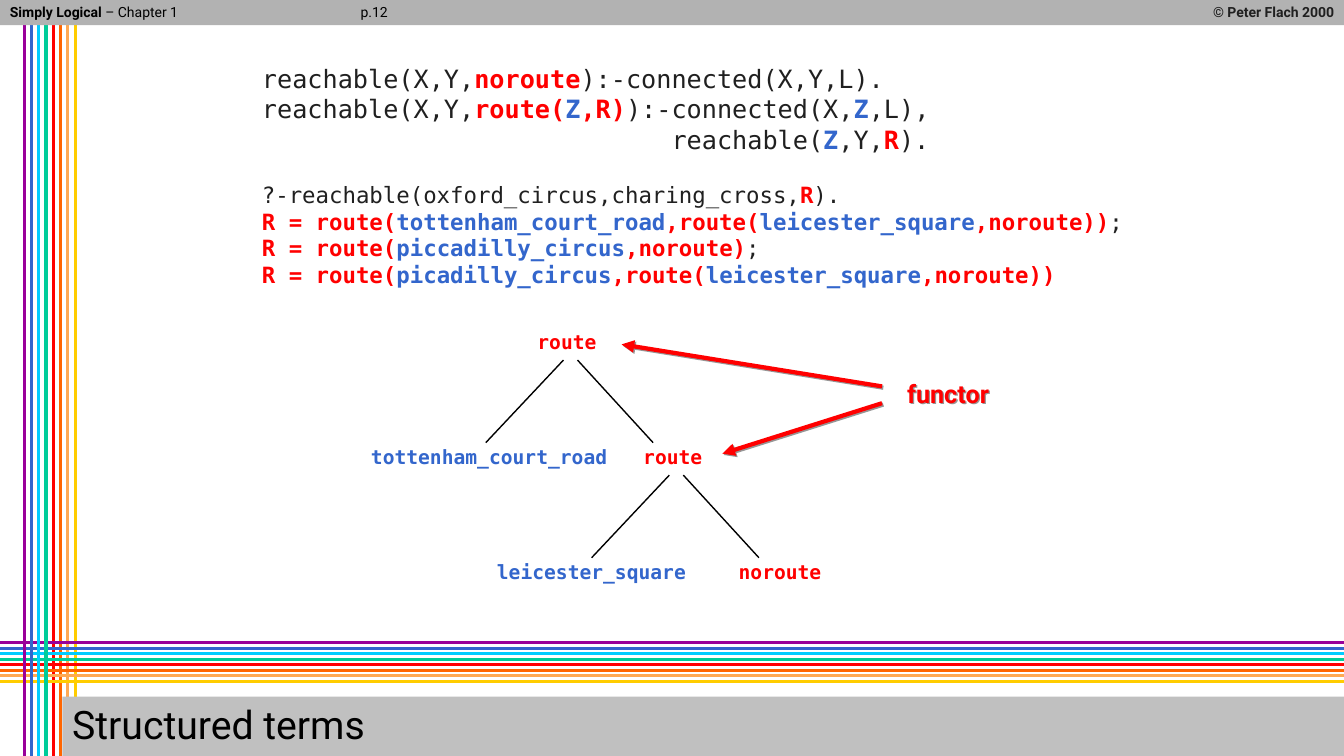
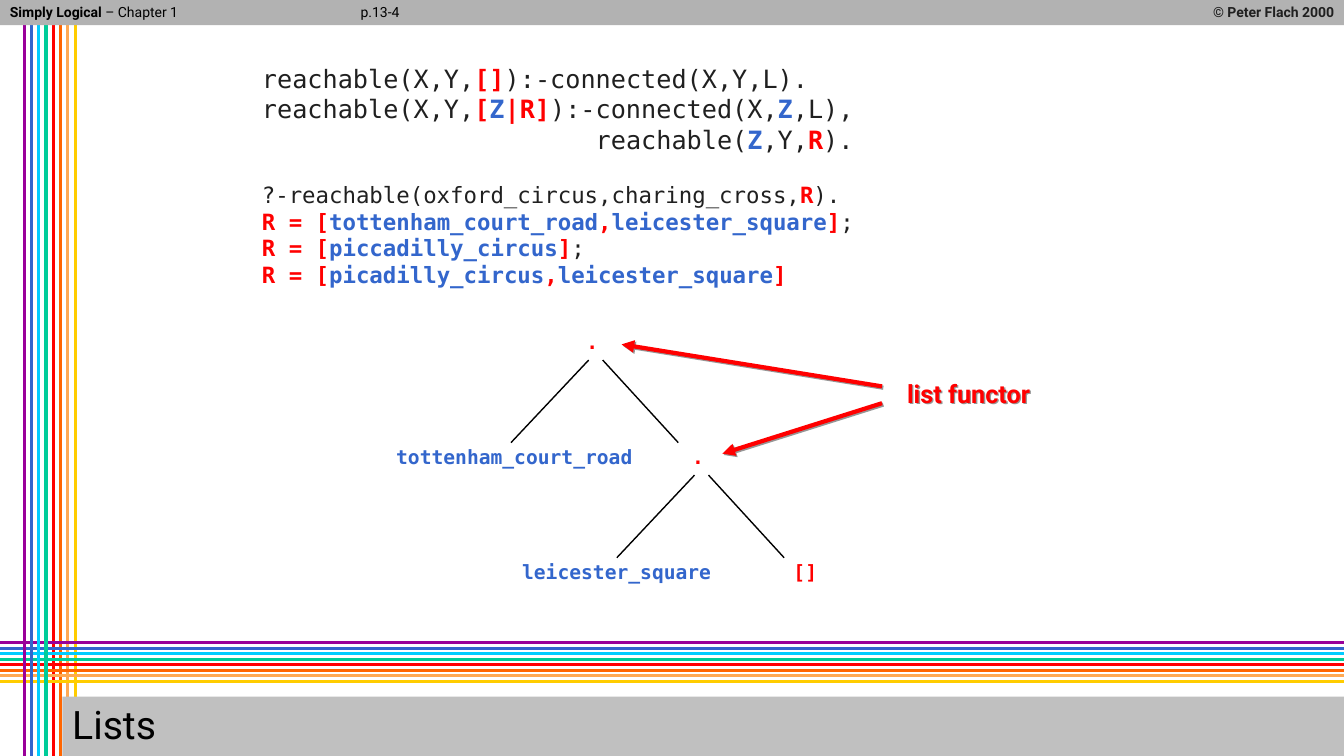
from dataclasses import dataclass

from lxml import etree
from pptx import Presentation
from pptx.dml.color import RGBColor
from pptx.enum.shapes import MSO_CONNECTOR, MSO_SHAPE
from pptx.enum.text import MSO_ANCHOR, PP_ALIGN
from pptx.oxml.ns import qn
from pptx.util import Pt

STRAIGHT = MSO_CONNECTOR.STRAIGHT
RECTANGLE = MSO_SHAPE.RECTANGLE
TOP, MIDDLE = MSO_ANCHOR.TOP, MSO_ANCHOR.MIDDLE
LEFT, CENTER, RIGHT = PP_ALIGN.LEFT, PP_ALIGN.CENTER, PP_ALIGN.RIGHT


@dataclass(frozen=True)
class Theme:
    width: float = 960
    height: float = 540
    sans: str = "Roboto"
    mono: str = "DejaVu Sans Mono"
    mono_advance: float = 0.602
    small: float = 10
    node: float = 14
    query: float = 16
    clause: float = 18
    caption: float = 18
    title: float = 28
    black: str = "000000"
    ink: str = "202020"
    red: str = "FF0000"
    blue: str = "3366CC"
    header: str = "B2B2B2"
    footer: str = "C0C0C0"
    shadow: str = "969696"
    cool: tuple = ("990099", "3366CC", "00CCFF", "00CC99")
    warm: tuple = ("FF0000", "FF6600", "FFA953", "FFCC00")


def apply(target, values):
    for name, value in values.items():
        setattr(target, name, value)


class Deck:
    def __init__(self, theme):
        self.theme = theme
        self.presentation = Presentation()
        apply(self.presentation, {"slide_width": Pt(theme.width),
                                  "slide_height": Pt(theme.height)})
        self.page = None

    def rectangle(self, left, top, width, height, color):
        shape = self.page.shapes.add_shape(
            RECTANGLE, Pt(left), Pt(top), Pt(width), Pt(height))
        shape.shadow.inherit = False
        shape.fill.solid()
        shape.fill.fore_color.rgb = RGBColor.from_string(color)
        shape.line.fill.background()

    def line(self, start, end, color, weight):
        connector = self.page.shapes.add_connector(
            STRAIGHT, *(Pt(value) for value in (*start, *end)))
        connector.line.color.rgb = RGBColor.from_string(color)
        connector.line.width = Pt(weight)
        etree.SubElement(connector._element.spPr, qn("a:effectLst"))
        return connector

    def cast_shadow(self, shape):
        properties = shape._element.spPr
        effects = properties.find(qn("a:effectLst"))
        if effects is None:
            effects = etree.SubElement(properties, qn("a:effectLst"))
        shadow = etree.SubElement(effects, qn("a:outerShdw"), blurRad="0",
                                  dist=str(Pt(1.4)), dir="2700000",
                                  algn="ctr", rotWithShape="0")
        etree.SubElement(shadow, qn("a:srgbClr"), val=self.theme.shadow)

    def arrow(self, start, end):
        connector = self.line(start, end, self.theme.red, 3)
        etree.SubElement(connector.line._get_or_add_ln(), qn("a:tailEnd"),
                         type="triangle")
        self.cast_shadow(connector)

    def text_box(self, left, top, width, height, anchor=TOP):
        box = self.page.shapes.add_textbox(
            Pt(left), Pt(top), Pt(width), Pt(height))
        apply(box.text_frame, {"word_wrap": True, "vertical_anchor": anchor})
        return box

    def span(self, para, text, font, size, color, bold=False):
        run = para.add_run()
        run.text = text
        apply(run.font, {"name": font, "size": Pt(size), "bold": bold})
        run.font.color.rgb = RGBColor.from_string(color)

    def label(self, box, spans, size, color, align=LEFT, font=None):
        para = box.text_frame.paragraphs[0]
        apply(para, {"alignment": align, "line_spacing": 0.9})
        for text, bold in spans:
            self.span(para, text, font or self.theme.sans, size, color, bold)

    def frame(self, title, number):
        theme = self.theme
        self.page = self.presentation.slides.add_slide(
            self.presentation.slide_layouts[6])
        colors = theme.cool + theme.warm
        columns = [((17.3 + 5.2 * index, 0),
                    (17.3 + 5.2 * index, theme.height), color)
                   for index, color in enumerate(colors)]
        rows = [((theme.width, 459.2 + 3.9 * index),
                 (0, 459.2 + 3.9 * index), color)
                for index, color in enumerate(colors)]
        split = len(theme.cool)
        for start, end, color in columns[split:] + rows + columns[:split]:
            self.line(start, end, color, 2.25)
        self.rectangle(0, 0, theme.width, 18, theme.header)
        self.label(self.text_box(0, 0, 192, 18),
                   [("Simply Logical", True), (" – Chapter 1", False)],
                   theme.small, theme.black)
        self.label(self.text_box(700, 0, 260, 18),
                   [("© Peter Flach 2000", True)],
                   theme.small, theme.ink, RIGHT)
        self.label(self.text_box(250.5, 0, 70, 18), [(number, False)],
                   theme.small, theme.black)
        self.rectangle(44.5, 497.5, theme.width - 44.5, 42.5, theme.footer)
        self.label(self.text_box(44.5, 498, 900, 42.5, MIDDLE),
                   [(title, False)], theme.title, theme.black)

    def code(self, clauses, indent, query):
        theme = self.theme
        frame = self.text_box(180, 41.8, 636, 168.5).text_frame
        lines = [(line, theme.clause) for line in clauses]
        lines += [(line, theme.query) for line in query]
        for index, (line, size) in enumerate(lines):
            para = frame.add_paragraph() if index else frame.paragraphs[0]
            if index == len(clauses) - 1:
                margin = Pt(indent * theme.mono_advance * size)
                para._p.get_or_add_pPr().set("marL", str(margin))
            if index == len(clauses):
                para.space_before = Pt(19)
            self.marked_spans(para, line, size)

    def marked_spans(self, para, line, size):
        theme = self.theme
        for outer, part in enumerate(line.split("*")):
            for inner, piece in enumerate(part.split("~")):
                if piece:
                    color = (theme.blue if inner % 2
                             else theme.red if outer % 2 else theme.ink)
                    self.span(para, piece, theme.mono, size, color,
                              color != theme.ink)

    def node(self, center, top, text, color):
        theme = self.theme
        width = len(text) * theme.node * theme.mono_advance + 24
        box = self.text_box(center - width / 2, top, width, 23)
        self.label(box, [(text, True)], theme.node, color, CENTER, theme.mono)

    def fork(self, center, top):
        for side, reach in ((1, 59), (-1, 60.5)):
            self.line((center + side * 5, top),
                      (center + side * reach, top + 59), self.theme.black, 1)

    def tree(self, shift, functor, tail):
        theme = self.theme
        level = 82.2
        nodes = [(405, 0, functor, theme.red),
                 (349.5, 1, "tottenham_court_road", theme.blue),
                 (422.6, 2, "leicester_square", theme.blue),
                 (480.6, 1, functor, theme.red),
                 (557.2, 2, tail, theme.red)]
        for center, depth, text, color in nodes:
            self.node(center + shift, 234 + depth * level, text, color)
        for depth in range(2):
            self.fork(407.5 + depth * 75.6 + shift, 257.2 + depth * level)

    def callout(self, text):
        box = self.text_box(640.8, 269.2, 120, 26.6)
        self.label(box, [(text, True)], self.theme.caption, self.theme.red)
        self.cast_shadow(box)
        self.arrow((630, 276), (444, 246))
        self.arrow((630, 288), (516, 324))


PAGES = [
    {"title": "Structured terms", "number": "p.12",
     "empty": "noroute", "pair": "route(~Z~,R)",
     "answers": [
         "*R = route(~tottenham_court_road~,route(~leicester_square~,noroute))*;",
         "*R = route(~piccadilly_circus~,noroute)*;",
         "*R = route(~picadilly_circus~,route(~leicester_square~,noroute))*"],
     "shift": 0, "functor": "route", "callout": "functor"},
    {"title": "Lists", "number": "p.13-4",
     "empty": "[]", "pair": "[~Z~|R]",
     "answers": [
         "*R = [~tottenham_court_road~,~leicester_square~]*;",
         "*R = [~piccadilly_circus~]*;",
         "*R = [~picadilly_circus~,~leicester_square~]*"],
     "shift": 18, "functor": ".", "callout": "list functor"},
]


def main():
    deck = Deck(Theme())
    for content in PAGES:
        deck.frame(content["title"], content["number"])
        head = f"reachable(X,Y,*{content['pair']}*):-"
        indent = len(head.replace("*", "").replace("~", ""))
        clauses = [f"reachable(X,Y,*{content['empty']}*):-connected(X,Y,L).",
                   head + "connected(X,~Z~,L),",
                   "reachable(~Z~,Y,*R*)."]
        query = ["?-reachable(oxford_circus,charing_cross,*R*)."]
        deck.tree(content["shift"], content["functor"], content["empty"])
        deck.code(clauses, indent, query + content["answers"])
        deck.callout(content["callout"])
    deck.presentation.save("out.pptx")


if __name__ == "__main__":
    main()
